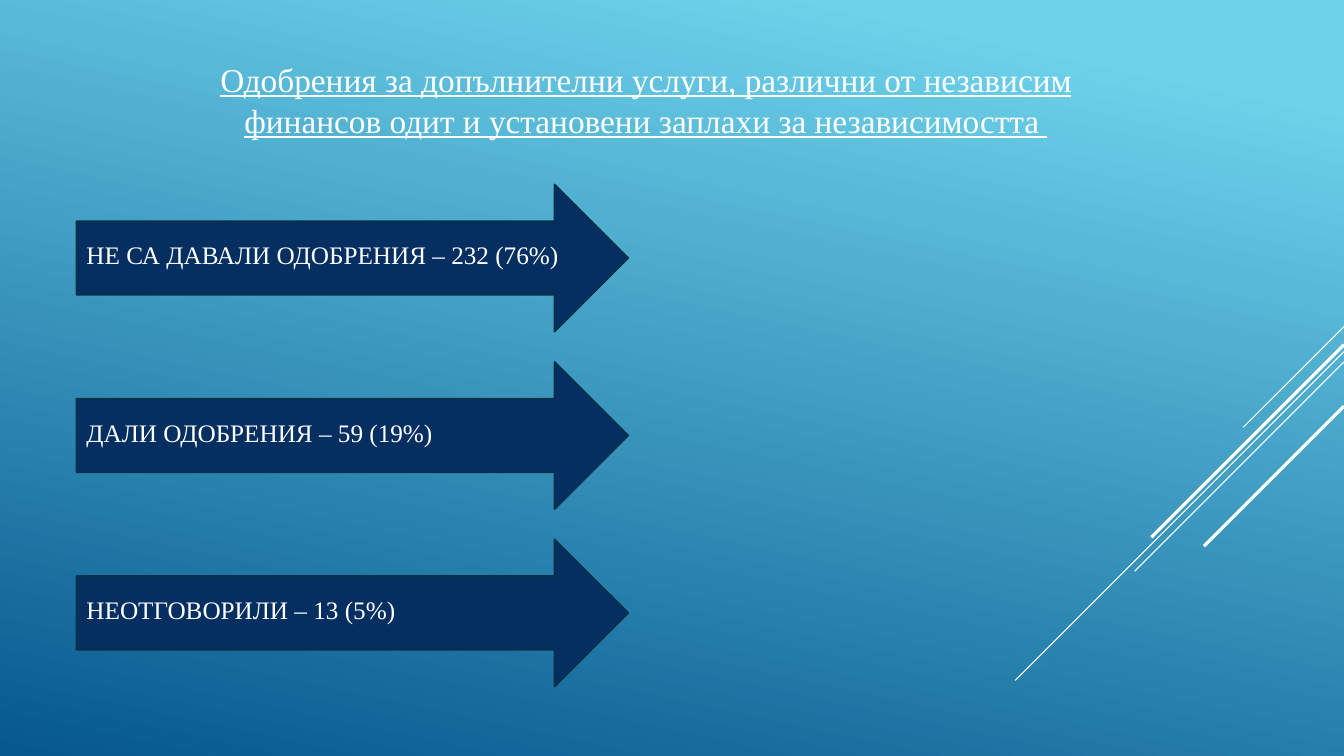
from dataclasses import dataclass

from lxml import etree
from pptx import Presentation, util as u
from pptx.dml.color import RGBColor
from pptx.enum import shapes, text
from pptx.oxml.ns import qn

# The grid: 100 columns by 100 rows
WIDTH, HEIGHT = u.Inches(13.33), u.Inches(7.5)
FONT = "Times New Roman"
WHITE, NAVY, OUTLINE = "FFFFFF", "052F61", "043148"


@dataclass(frozen=True)
class Box:
    column: float
    row: float
    columns: float
    rows: float

    def place(self) -> tuple[int, int, int, int]:
        return (across(self.column), down(self.row),
                across(self.columns), down(self.rows))


@dataclass(frozen=True)
class Streak:
    """A diagonal that falls at 45 degrees from the right edge."""
    row: float
    drop: float
    weight: float


STREAKS = [
    Streak(43.2, 13.33, 0.75),
    Streak(46.53, 43.47, 0.75),
    Streak(47.87, 27.7, 0.75),
    Streak(45.6, 25.47, 2.25),
    Streak(53.73, 18.53, 2.25),
]
HEADING = ("Одобрения за допълнителни услуги, различни от независим "
           "финансов одит и установени заплахи за независимостта ")
ANSWERS = [
    "НЕ СА ДАВАЛИ ОДОБРЕНИЯ – 232 (76%)",
    "ДАЛИ ОДОБРЕНИЯ – 59 (19%)",
    "НЕОТГОВОРИЛИ – 13 (5%)",
]
FIRST_ROW, ROW_STEP, LABEL_OFFSET = 24.4, 23.47, 3.93


def across(columns: float) -> int:
    return round(WIDTH * columns / 100)


def down(rows: float) -> int:
    return round(HEIGHT * rows / 100)


def color(value: str) -> RGBColor:
    return RGBColor.from_string(value)


def paint_background(slide) -> None:
    fill = slide.background.fill
    fill.gradient()
    fill.gradient_angle = 360 - 102
    for stop, (position, value) in zip(fill.gradient_stops,
                                       [(0.1, "6ED2EB"), (1, "06588E")]):
        stop.position = position
        stop.color.rgb = color(value)


def add_streak(slide, streak: Streak) -> None:
    drop = down(streak.drop)
    top = down(streak.row)
    line = slide.shapes.add_connector(
        shapes.MSO_CONNECTOR.STRAIGHT, WIDTH, top, WIDTH - drop, top + drop)
    line.line.color.rgb = color(WHITE)
    line.line.width = u.Pt(streak.weight)
    etree.SubElement(line._element.spPr, qn("a:effectLst"))


def add_arrow(slide, box: Box) -> None:
    arrow = slide.shapes.add_shape(shapes.MSO_SHAPE.RIGHT_ARROW, *box.place())
    arrow.shadow.inherit = False
    arrow.fill.solid()
    arrow.fill.fore_color.rgb = color(NAVY)
    arrow.line.color.rgb = color(OUTLINE)
    arrow.line.width = u.Pt(1.25)


def add_text(slide, box: Box, content: str, *, size: float,
             align=text.PP_ALIGN.LEFT, underline: bool = False,
             spacing: float = 1.0) -> None:
    frame = slide.shapes.add_textbox(*box.place()).text_frame
    frame.word_wrap = True
    frame.vertical_anchor = text.MSO_ANCHOR.MIDDLE
    paragraph = frame.paragraphs[0]
    paragraph.alignment = align
    paragraph.line_spacing = spacing
    run = paragraph.add_run()
    run.text = content
    run.font.name = FONT
    run.font.size = u.Pt(size)
    run.font.underline = underline
    run.font.color.rgb = color(WHITE)


def main() -> None:
    presentation = Presentation()
    presentation.slide_width, presentation.slide_height = WIDTH, HEIGHT
    slide = presentation.slides.add_slide(presentation.slide_layouts[6])

    # Background and decoration
    paint_background(slide)
    for streak in STREAKS:
        add_streak(slide, streak)

    # Heading
    add_text(slide, Box(13.05, 8, 70, 10.13), HEADING, size=23.8,
             align=text.PP_ALIGN.CENTER, underline=True, spacing=1.04)

    # One labelled arrow per answer
    for index, answer in enumerate(ANSWERS):
        row = FIRST_ROW + index * ROW_STEP
        add_arrow(slide, Box(5.7, row, 41.04, 19.47))
        add_text(slide, Box(5.7, row + LABEL_OFFSET, 38.1, 10.67), answer,
                 size=18)

    presentation.save("out.pptx")


if __name__ == "__main__":
    main()
